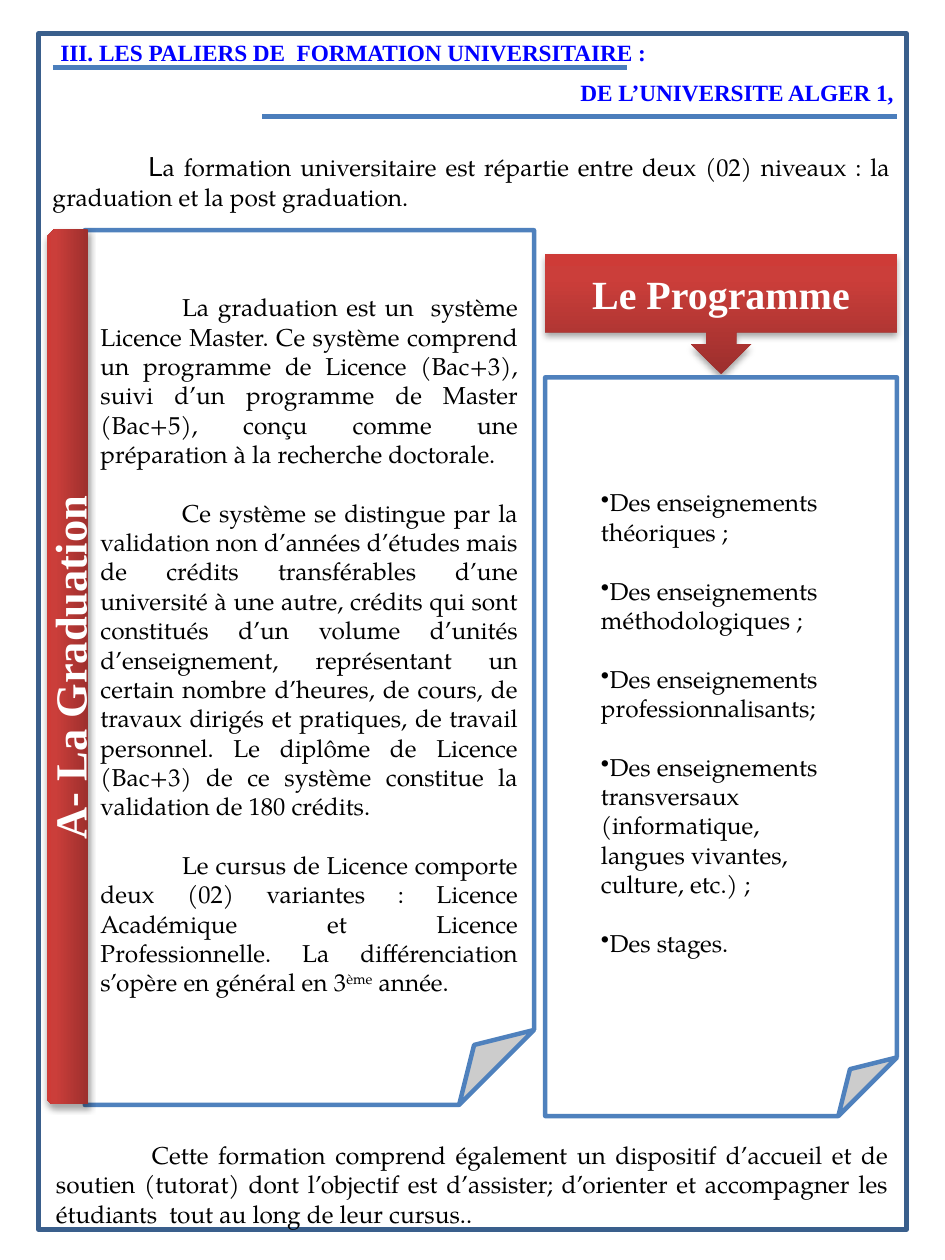
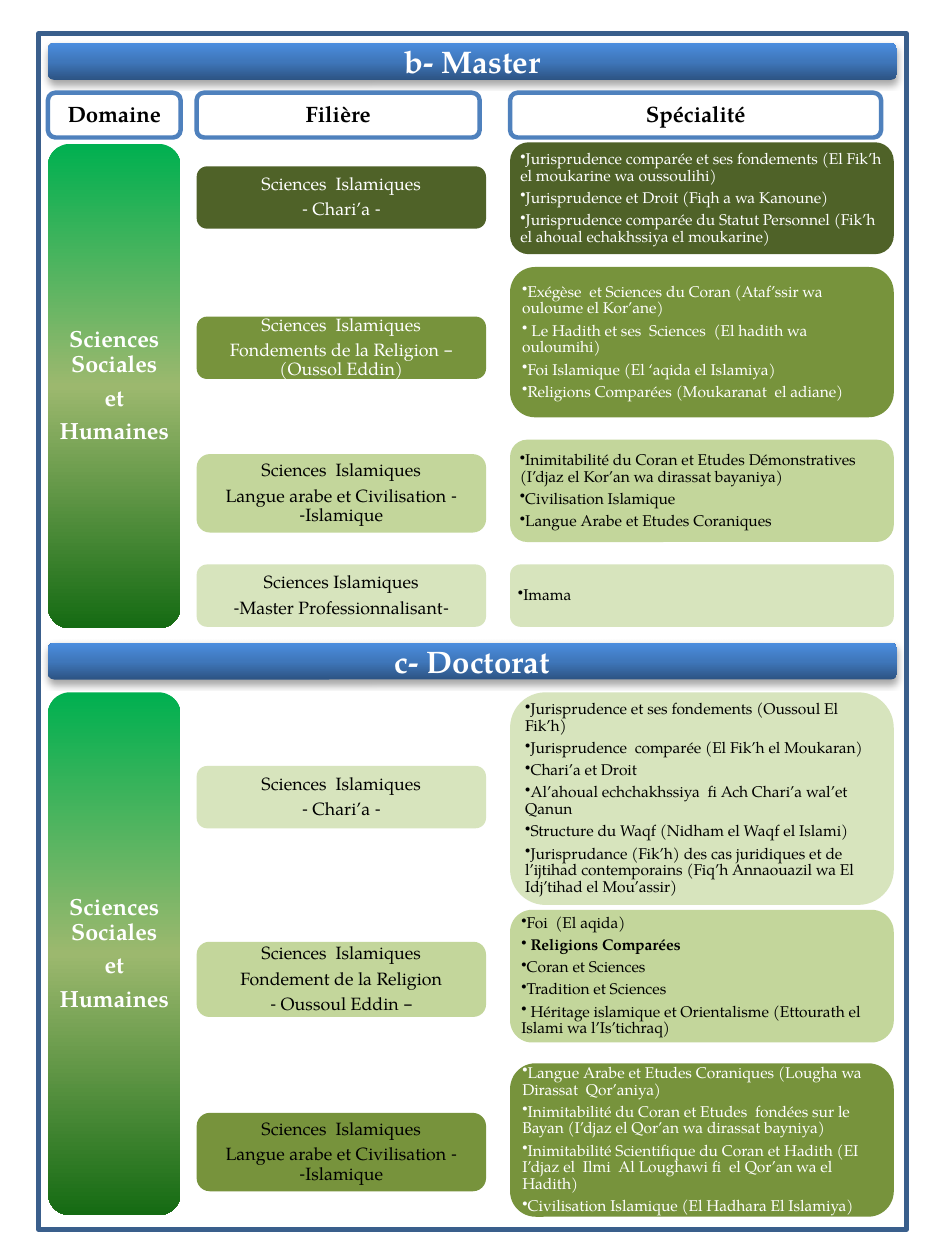
from lxml import etree
from pptx import Presentation
from pptx import util as u
from pptx.dml.color import RGBColor
from pptx.enum import shapes, text
from pptx.oxml.ns import qn

SHAPE = shapes.MSO_SHAPE
ALIGN = text.PP_ALIGN
MIDDLE, TOP = text.MSO_ANCHOR.MIDDLE, text.MSO_ANCHOR.TOP

# Shared look
BODY, TITLE = "TeX Gyre Pagella", "Times New Roman"
BLACK, WHITE, BLUE = "000000", "FFFFFF", "4F81BD"
FRAME, RULE, HEADING = "3A5F8C", "4B7EBC", "0000FF"
GREENS = ["4F6228", "77933C", "C3D69B", "D7E4BD"]
RED_FADE = [(0, "9C2F2D"), (80, "CB3E3A"), (100, "CE3B37")]
BLUE_FADE = [(0, "2D5484"), (50, "3F77BB"), (100, "4B8DDE")]
GREEN_FADE = [(0, "00B050"), (50, "9CB86E"), (100, "156B13")]
UP, DOWN = 90, 270
TIGHT = (0.03,) * 4

# Columns of the programme table: left, width of cells, width of header
DOMAIN, FIELD, SPECIALITY = (0.3, 0.83, 0.83), (1.23, 1.81, 1.77), (3.19, 2.4, 2.32)


def rgb(color):
    return RGBColor.from_string(color)


def fade(sp, stops, angle):
    sp.fill.gradient()
    sp.fill.gradient_angle = angle
    gs_list = sp.element.spPr.find(qn("a:gradFill")).find(qn("a:gsLst"))
    gs_list.clear()
    for pos, color in stops:
        gs = etree.SubElement(gs_list, qn("a:gs"), pos=str(pos * 1000))
        etree.SubElement(gs, qn("a:srgbClr"), val=color)


def drop_shadow(sp):
    effects = sp.element.spPr.find(qn("a:effectLst"))
    shadow = etree.SubElement(effects, qn("a:outerShdw"), blurRad=str(u.Pt(3.1)),
                              dist=str(u.Pt(1.8)), dir="5400000", rotWithShape="0")
    color = etree.SubElement(shadow, qn("a:srgbClr"), val=BLACK)
    etree.SubElement(color, qn("a:alpha"), val="35000")


def add_shape(s, kind, at, fill=None, line=None):
    sp = s.shapes.add_shape(kind, *map(u.Inches, at))
    sp.shadow.inherit = False
    if fill:
        sp.fill.solid()
        sp.fill.fore_color.rgb = rgb(fill)
    else:
        sp.fill.background()
    if line:
        sp.line.color.rgb = rgb(line)
        sp.line.width = u.Pt(2)
    else:
        sp.line.fill.background()
    return sp


def add_rule(s, x1, x2, y):
    c = s.shapes.add_connector(shapes.MSO_CONNECTOR.STRAIGHT,
                               *map(u.Inches, (x1, y, x2, y)))
    c.line.color.rgb = rgb(RULE)
    c.line.width = u.Pt(2.25)
    etree.SubElement(c.element.spPr, qn("a:effectLst"))


def write(sp, paragraphs, size, color=BLACK, font=BODY, bold=False, align=ALIGN.LEFT,
          anchor=MIDDLE, insets=(0.1, 0.05, 0.1, 0.05), gap=0, indent=0,
          bullet=False, packed=False, rtl=False):
    """Fill a shape; a paragraph is a string, or a tuple of strings for its runs."""
    tf = sp.text_frame
    tf.word_wrap = True
    tf.vertical_anchor = anchor
    tf.margin_left, tf.margin_top, tf.margin_right, tf.margin_bottom = map(u.Inches, insets)
    for i, content in enumerate(paragraphs):
        p = tf.add_paragraph() if i else tf.paragraphs[0]
        for part in (content,) if isinstance(content, str) else content:
            r = p.add_run()
            r.text = part
            r.font.name, r.font.size, r.font.bold = font, u.Pt(size), bold
            r.font.color.rgb = rgb(color)
        p.alignment = align
        if gap and i:
            p.space_before = u.Pt(gap)
        if packed:
            p.line_spacing = 0.9
            p.space_after = u.Pt(0.35 * size)
        pPr = p._p.get_or_add_pPr()
        if indent:
            pPr.set("indent", str(u.Inches(indent)))
        if rtl:
            pPr.set("rtl", "1")
        if bullet:
            pPr.set("marL", "0")
            pPr.set("indent", "0")
            etree.SubElement(pPr, qn("a:buChar"), char="•")
    return tf


def add_text(s, at, paragraphs, size, **style):
    return write(s.shapes.add_textbox(*map(u.Inches, at)), paragraphs, size, **style)


def add_sign(s, kind, at, label, stops, size, font):
    sp = add_shape(s, kind, at)
    fade(sp, stops, UP)
    drop_shadow(sp)
    write(sp, [label], size, WHITE, font, True, ALIGN.CENTER, insets=(0,) * 4)
    return sp


def add_page(prs):
    s = prs.slides.add_slide(prs.slide_layouts[6])
    add_shape(s, SHAPE.RECTANGLE, (0.24, 0.21, 5.43, 7.48), line=FRAME)
    return s


# Programme table parts
def add_banner(s, top, label):
    add_sign(s, SHAPE.ROUNDED_RECTANGLE, (0.3, top, 5.31, 0.23), label, BLUE_FADE, 14, BODY)


def add_header(s, column, label):
    left, _, width = column
    sp = add_shape(s, SHAPE.ROUNDED_RECTANGLE, (left, 0.58, width, 0.28), WHITE, BLUE)
    write(sp, [label], 10, bold=True, align=ALIGN.CENTER, packed=True)


def add_cell(s, column, span, fill, paragraphs, size, **style):
    left, width, _ = column
    top, height = span
    sp = add_shape(s, SHAPE.ROUNDED_RECTANGLE, (left, top, width, height), fill)
    return sp, write(sp, paragraphs, size, insets=TIGHT, packed=True, **style)


def add_level(s, banner_top, label, span, rows):
    add_banner(s, banner_top, label)
    domain, _ = add_cell(s, DOMAIN, span, None, ["Sciences Sociales", "et", "Humaines"], 10.5,
                         color=WHITE, bold=True, align=ALIGN.CENTER, rtl=True)
    fade(domain, GREEN_FADE, DOWN)
    for shade, field_color, field_span, field, color, item_span, items in rows:
        add_cell(s, FIELD, field_span, GREENS[shade], field, 8, color=field_color,
                 align=ALIGN.CENTER, rtl=True)
        _, tf = add_cell(s, SPECIALITY, item_span, GREENS[shade], items, 7,
                         color=color, bullet=True)
        for p in tf.paragraphs:
            for r in p.runs[1:]:
                r.font.bold = True


ISLAMIC = "Sciences  Islamiques"
ARABIC = "- Langue arabe et Civilisation Islamique-"

# Rows: shade, field colour, field top and height, field, item colour, top and height, items
MASTER = [
    (0, WHITE, (1.04, 0.39), [ISLAMIC, "- Chari’a -"], WHITE, (0.89, 0.7), [
        "Jurisprudence comparée et ses fondements (El Fik’h el moukarine wa oussoulihi)",
        "Jurisprudence et Droit (Fiqh a wa Kanoune)",
        "Jurisprudence comparée du Statut Personnel (Fik’h el ahoual echakhssiya el moukarine)"]),
    (1, WHITE, (1.98, 0.39), [ISLAMIC, "– Fondements de la Religion (Oussol Eddin)"],
     WHITE, (1.67, 0.94), [
        "Exégèse  et Sciences du Coran (Ataf’ssir wa ouloume el Kor’ane)",
        " Le Hadith et ses  Sciences  (El hadith wa ouloumihi)",
        "Foi Islamique (El ‘aqida el Islamiya)",
        "Religions Comparées (Moukaranat  el adiane)"]),
    (2, BLACK, (2.84, 0.49), [ISLAMIC, ARABIC], BLACK, (2.75, 0.64), [
        "Inimitabilité du Coran et Etudes Démonstratives (I’djaz el Kor’an wa dirassat bayaniya)",
        "Civilisation Islamique",
        "Langue Arabe et Etudes Coraniques"]),
    (3, BLACK, (3.53, 0.39), ["Sciences Islamiques", "-Master Professionnalisant-"],
     BLACK, (3.53, 0.39), ["Imama"]),
]
DOCTORAT = [
    (3, BLACK, (4.79, 0.39), [ISLAMIC, "- Chari’a -"], BLACK, (4.33, 1.33), [
        "Jurisprudence et ses fondements (Oussoul El Fik’h)",
        "Jurisprudence  comparée (El Fik’h el Moukaran)",
        "Chari’a et Droit",
        "Al’ahoual echchakhssiya  fi Ach Chari’a wal’et Qanun",
        "Structure du Waqf (Nidham el Waqf el Islami)",
        "Jurisprudance (Fik’h) des cas juridiques et de l’ijtihad contemporains "
        "(Fiq’h Annaouazil wa El Idj’tihad el Mou’assir)"]),
    (2, BLACK, (5.89, 0.47), [ISLAMIC, "Fondement de la Religion", "– Oussoul Eddin -"],
     BLACK, (5.69, 0.83), [
        "Foi  (El aqida)",
        (" ", "Religions Comparées"),
        "Coran et Sciences",
        "Tradition et Sciences",
        " Héritage islamique et Orientalisme (Ettourath el Islami wa l’Is’tichraq)"]),
    (1, BLACK, (6.96, 0.49), [ISLAMIC, ARABIC], WHITE, (6.65, 0.96), [
        "Langue Arabe et Etudes Coraniques (Lougha wa Dirassat  Qor’aniya)",
        "Inimitabilité du Coran et Etudes  fondées sur le Bayan (I’djaz el Qor’an wa dirassat bayniya)",
        "Inimitabilité Scientifique du Coran et Hadith "
        "(EI I’djaz el  Ilmi  Al Loughawi fi  el Qor’an wa el Hadith)",
        "Civilisation Islamique (El Hadhara El Islamiya)"]),
]

GRADUATION = [
    "La graduation est un  système Licence Master. Ce système comprend un programme de Licence "
    "(Bac+3), suivi d’un programme de Master (Bac+5), conçu comme une préparation à la "
    "recherche doctorale.",
    "Ce système se distingue par la validation non d’années d’études mais de crédits "
    "transférables d’une université à une autre, crédits qui sont constitués d’un volume "
    "d’unités d’enseignement, représentant un certain nombre d’heures, de cours, de travaux "
    "dirigés et pratiques, de travail personnel. Le diplôme de Licence (Bac+3) de ce système "
    "constitue la validation de 180 crédits.",
    ("Le cursus de Licence comporte deux (02) variantes : Licence Académique et Licence "
     "Professionnelle. La différenciation s’opère en général en 3", "ème", " année."),
]
PROGRAMME = [
    "Des enseignements théoriques ;",
    "Des enseignements méthodologiques ;",
    "Des enseignements professionnalisants;",
    "Des enseignements transversaux (informatique, langues vivantes, culture, etc.) ;",
    "Des stages.",
]


def build_graduation(prs):
    s = add_page(prs)
    # Heading and introduction
    heading = dict(color=HEADING, font=TITLE, bold=True)
    add_text(s, (0.28, 0.19, 5.33, 0.29), ["III. LES PALIERS DE  FORMATION UNIVERSITAIRE :"],
             10.5, anchor=TOP, **heading)
    add_text(s, (2.8, 0.42, 2.92, 0.31), ["DE L’UNIVERSITE ALGER 1,"], 10.5,
             align=ALIGN.RIGHT, insets=(0.13, 0.06, 0.13, 0.06), **heading)
    add_rule(s, 0.33, 3.92, 0.42)
    add_rule(s, 1.64, 5.61, 0.73)
    tf = add_text(s, (0.23, 0.89, 5.44, 0.49),
                  [("L", "a formation universitaire est répartie entre deux (02) niveaux : "
                         "la graduation et la post graduation.")],
                  11, align=ALIGN.JUSTIFY, anchor=TOP, indent=0.6)
    initial = tf.paragraphs[0].runs[0].font
    initial.name, initial.size = "Roboto", u.Pt(12)

    # Graduation sheet with its vertical band
    sheet = add_shape(s, SHAPE.FOLDED_CORNER, (0.53, 1.44, 2.81, 5.47), WHITE, BLUE)
    tf = write(sheet, GRADUATION, 11, align=ALIGN.JUSTIFY, gap=13.2, indent=0.51,
               insets=(0.1, 0.23, 0.1, 0.05))
    tf.paragraphs[-1].runs[1].font._element.set("baseline", "30000")
    band = add_sign(s, SHAPE.SNIP_ROUND_RECTANGLE, (-2.31, 4.04, 5.47, 0.26),
                    "A- La Graduation", RED_FADE, 20, TITLE)
    band.rotation = 270

    # Programme sheet
    add_sign(s, SHAPE.DOWN_ARROW_CALLOUT, (3.41, 1.59, 2.2, 0.75),
             "Le Programme", RED_FADE, 18, TITLE)
    add_shape(s, SHAPE.FOLDED_CORNER, (3.41, 2.36, 2.2, 4.62), WHITE, BLUE)
    add_text(s, (3.66, 3, 1.72, 3.25), PROGRAMME, 11, anchor=TOP, gap=13.2, bullet=True)

    # Closing text
    add_text(s, (0.22, 7.06, 5.47, 0.69),
             ["Cette formation comprend également un dispositif d’accueil et de soutien (tutorat) "
              "dont l’objectif est d’assister; d’orienter et accompagner les étudiants  tout au "
              "long de leur cursus.."],
             11, align=ALIGN.JUSTIFY, indent=0.6, insets=(0.13, 0.06, 0.13, 0.06))


def build_programmes(prs):
    s = add_page(prs)
    add_level(s, 0.27, "b- Master", (0.9, 3.03), MASTER)
    add_level(s, 4.02, "c- Doctorat", (4.33, 3.27), DOCTORAT)
    for column, label in ((DOMAIN, "Domaine"), (FIELD, "Filière"), (SPECIALITY, "Spécialité")):
        add_header(s, column, label)


def main():
    prs = Presentation()
    prs.slide_width, prs.slide_height = u.Inches(5.91), u.Inches(7.88)
    build_graduation(prs)
    build_programmes(prs)
    prs.save("out.pptx")


if __name__ == "__main__":
    main()
